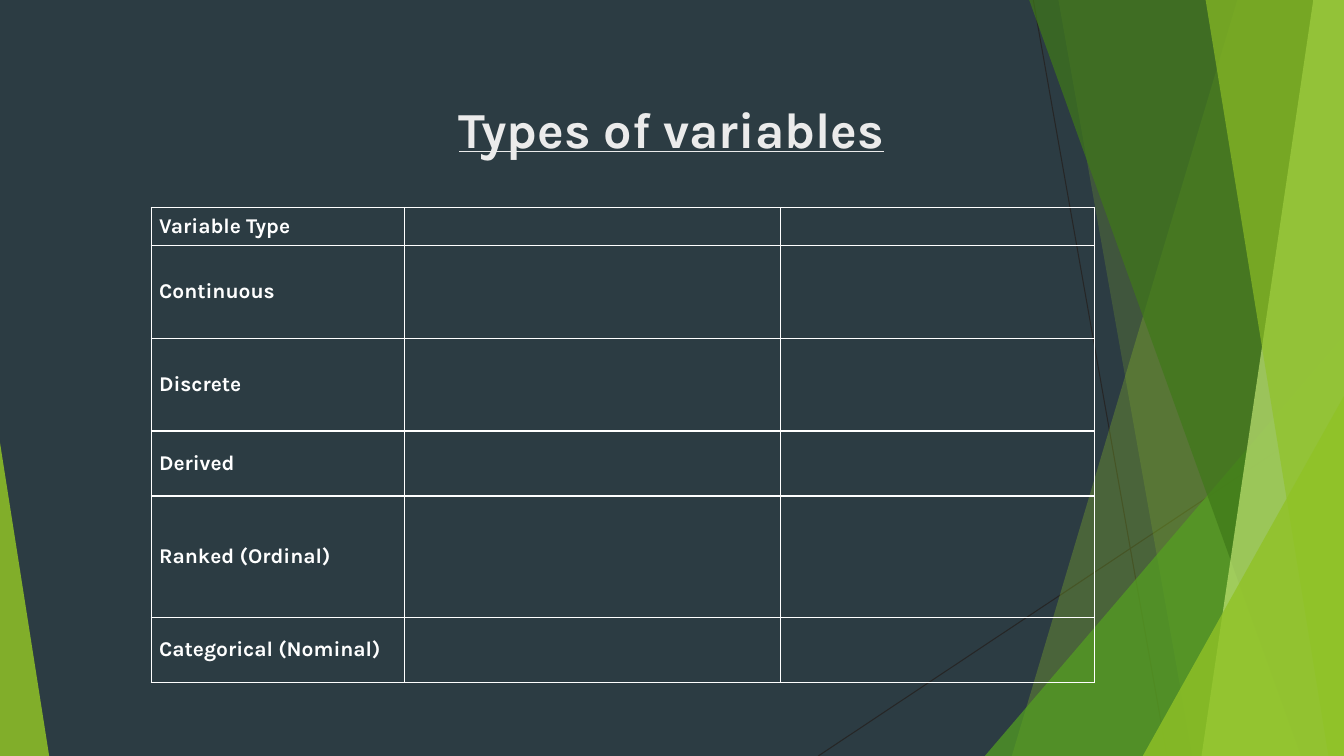
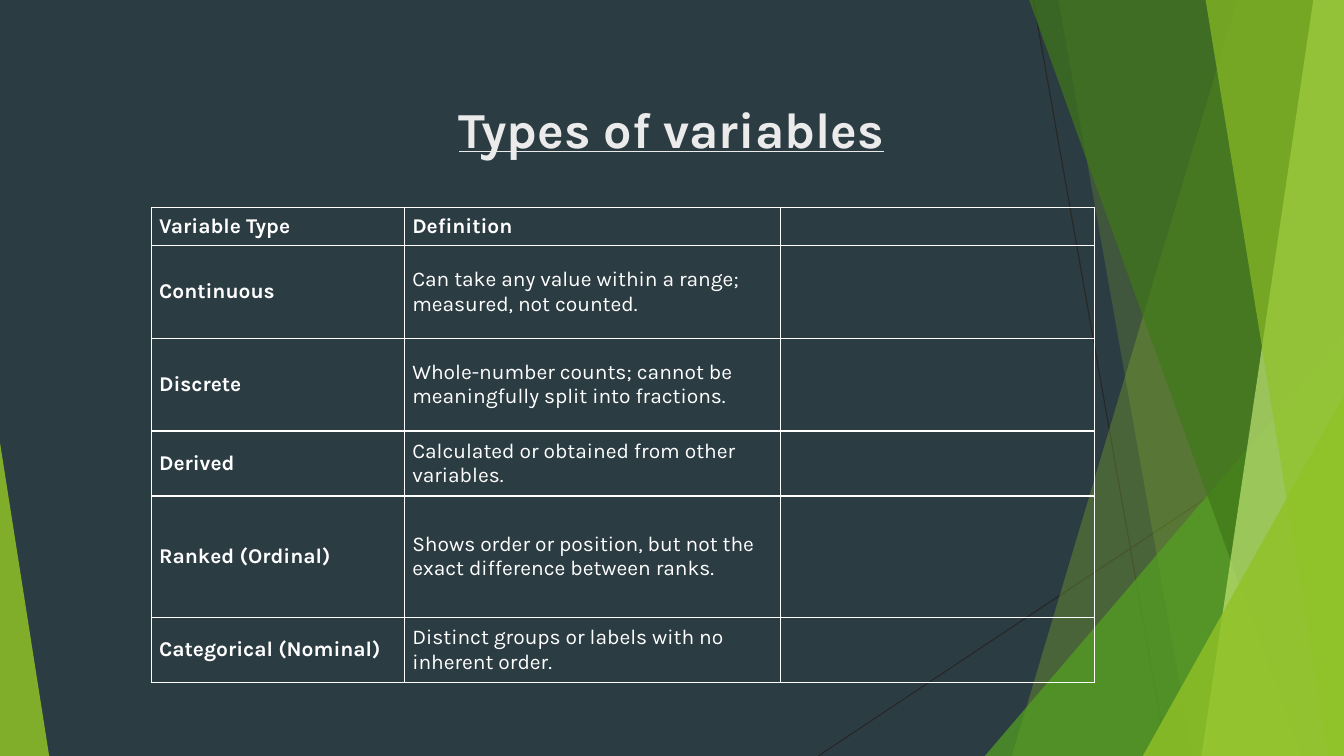
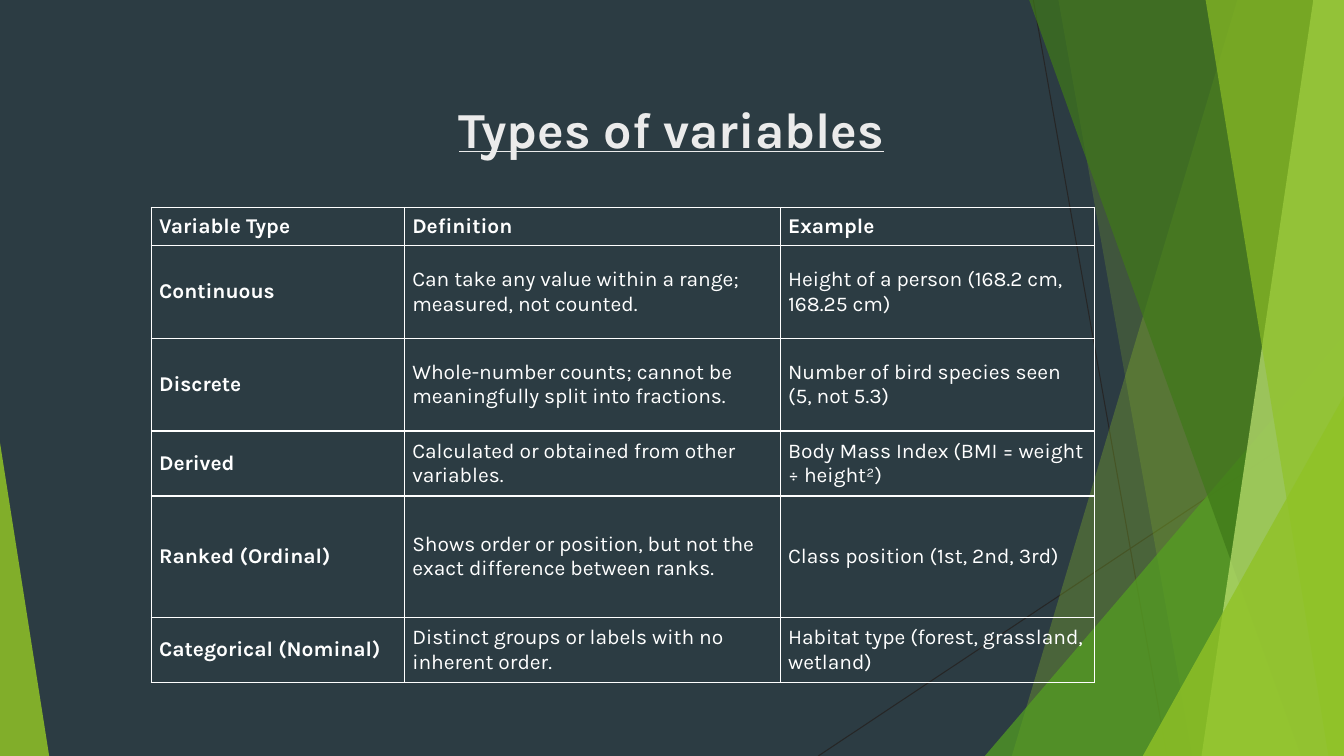
import dataclasses

import lxml.etree
import pptx
import pptx.dml.color
import pptx.enum.shapes
import pptx.enum.text
import pptx.oxml.ns
import pptx.util

Cm = pptx.util.Cm
Pt = pptx.util.Pt
qn = pptx.oxml.ns.qn
RGB = pptx.dml.color.RGBColor.from_string

WIDTH, HEIGHT = 33.87, 19.05
TITLE_ONLY_LAYOUT = 5


@dataclasses.dataclass(frozen=True)
class Theme:
    font: str = "Karla"
    title_size: int = 36
    table_size: int = 15
    background: str = "2C3C43"
    title: str = "EBEBEB"
    table: str = "FFFFFF"
    hairline: str = "262626"
    lime: str = "90C226"
    pale_lime: str = "C0E474"
    green: str = "54A021"
    dark_green: str = "3F7819"


THEME = Theme()

COLUMN_WIDTHS = (6.38, 9.47, 7.92)
ROW_HEIGHTS = (0.95, 2.34, 2.34, 1.64, 3.05, 1.65)
VARIABLES = (
    ("Variable Type", "Definition", "Example"),
    ("Continuous", "Can take any value within a range; measured, not counted.",
     "Height of a person (168.2 cm, 168.25 cm)"),
    ("Discrete", "Whole-number counts; cannot be meaningfully split into fractions.",
     "Number of bird species seen (5, not 5.3)"),
    ("Derived", "Calculated or obtained from other variables.",
     "Body Mass Index (BMI = weight ÷ height²)"),
    ("Ranked (Ordinal)", "Shows order or position, but not the exact difference between ranks.",
     "Class position (1st, 2nd, 3rd)"),
    ("Categorical (Nominal)", "Distinct groups or labels with no inherent order.",
     "Habitat type (forest, grassland, wetland)"),
)


def write_text(text_frame, text, *, size, color, bold=False, underline=False, align=None):
    text_frame.word_wrap = True
    paragraph = text_frame.paragraphs[0]
    paragraph.alignment = align
    if not text:
        # An empty cell still takes its row height from this size.
        lxml.etree.SubElement(paragraph._p, qn("a:endParaRPr"), sz=str(size * 100))
        return
    run = paragraph.add_run()
    run.text = text
    run.font.name = THEME.font
    run.font.size = Pt(size)
    run.font.bold = bold
    run.font.underline = underline
    run.font.color.rgb = RGB(color)


def add_cell_borders(cell, color, width):
    properties = cell._tc.get_or_add_tcPr()
    for position, side in enumerate(("a:lnL", "a:lnR", "a:lnT", "a:lnB")):
        line = lxml.etree.Element(qn(side), w=str(Pt(width)))
        fill = lxml.etree.SubElement(line, qn("a:solidFill"))
        lxml.etree.SubElement(fill, qn("a:srgbClr"), val=color)
        properties.insert(position, line)


class Deck:
    def __init__(self):
        self.presentation = pptx.Presentation()
        self.presentation.slide_width = Cm(WIDTH)
        self.presentation.slide_height = Cm(HEIGHT)
        self.layout = self.presentation.slide_layouts[TITLE_ONLY_LAYOUT]
        self.slide = None

    def add_slide(self):
        self.slide = self.presentation.slides.add_slide(self.layout)

    def line(self, x1, y1, x2, y2):
        connector = self.slide.shapes.add_connector(
            pptx.enum.shapes.MSO_CONNECTOR.STRAIGHT, Cm(x1), Cm(y1), Cm(x2), Cm(y2))
        connector.line.color.rgb = RGB(THEME.hairline)
        connector.line.width = Pt(0.75)
        lxml.etree.SubElement(connector.element.spPr, qn("a:effectLst"))

    def paint(self, shape, color, opacity):
        shape.shadow.inherit = False
        shape.fill.solid()
        shape.fill.fore_color.rgb = RGB(color)
        color_element = shape.element.spPr.find(".//" + qn("a:srgbClr"))
        lxml.etree.SubElement(color_element, qn("a:alpha"), val=str(opacity * 1000))
        shape.line.fill.background()

    def band(self, top_x, bottom_x, color, opacity):
        """Fill from a slanted left edge to the right side of the slide."""
        top = -0.02
        builder = self.slide.shapes.build_freeform(Cm(top_x), Cm(top))
        corners = ((WIDTH, top), (WIDTH, HEIGHT), (bottom_x, HEIGHT))
        builder.add_line_segments([(Cm(x), Cm(y)) for x, y in corners], close=True)
        self.paint(builder.convert_to_shape(), color, opacity)

    def corner(self, left, right, top, apex, color, opacity):
        """Add a triangle standing on the bottom edge, apex 0 left or 1 right."""
        shape = self.slide.shapes.add_shape(
            pptx.enum.shapes.MSO_SHAPE.ISOSCELES_TRIANGLE,
            Cm(left), Cm(top), Cm(right - left), Cm(HEIGHT - top))
        shape.adjustments[0] = apex
        self.paint(shape, color, opacity)

    def backdrop(self):
        """Draw the shared background and move it from the slide to its layout."""
        fill = self.layout.background.fill
        fill.solid()
        fill.fore_color.rgb = RGB(THEME.background)
        for placeholder in list(self.layout.placeholders)[1:]:
            self.layout.shapes.element.remove(placeholder.element)

        self.line(26.04, 0, 29.41, HEIGHT)
        self.line(WIDTH, 10.24, 20.62, HEIGHT)
        self.band(31.19, 25.5, THEME.lime, 30)
        self.band(26.67, 30.05, THEME.lime, 20)
        self.corner(24.82, WIDTH, 8.46, 1, THEME.green, 72)
        self.band(25.93, 32.79, THEME.dark_green, 70)
        self.band(33.1, 30.28, THEME.pale_lime, 70)
        self.band(30.38, 33.48, THEME.lime, 65)
        self.corner(28.8, WIDTH, 9.98, 1, THEME.lime, 80)
        self.corner(0, 1.24, 11.15, 0, THEME.lime, 85)

        drawn = [shape for shape in self.slide.shapes if not shape.is_placeholder]
        for position, shape in enumerate(drawn, start=2):
            self.layout.shapes.element.insert(position, shape.element)

    def title(self, text):
        shape = self.slide.shapes.title
        shape.left, shape.top = Cm(4.67), Cm(2.34)
        shape.width, shape.height = Cm(24.51), Cm(2.72)
        shape.text_frame.vertical_anchor = pptx.enum.text.MSO_ANCHOR.TOP
        write_text(shape.text_frame, text, size=THEME.title_size, color=THEME.title,
                   bold=True, underline=True, align=pptx.enum.text.PP_ALIGN.CENTER)

    def table(self, rows, shown_columns):
        """Add the table with text in only the first shown_columns columns."""
        table = self.slide.shapes.add_table(
            len(rows), len(COLUMN_WIDTHS), Cm(3.81), Cm(5.23),
            Cm(sum(COLUMN_WIDTHS)), Cm(sum(ROW_HEIGHTS))).table
        table.first_row = table.horz_banding = False
        for column, width in zip(table.columns, COLUMN_WIDTHS):
            column.width = Cm(width)
        for row, height in zip(table.rows, ROW_HEIGHTS):
            row.height = Cm(height)
        for row_index, texts in enumerate(rows):
            for column_index, text in enumerate(texts):
                cell = table.cell(row_index, column_index)
                cell.fill.background()
                cell.vertical_anchor = pptx.enum.text.MSO_ANCHOR.MIDDLE
                cell.margin_left = cell.margin_right = Cm(0.2)
                cell.margin_top = cell.margin_bottom = Cm(0.1)
                add_cell_borders(cell, THEME.table, 1)
                write_text(cell.text_frame, text if column_index < shown_columns else "",
                           size=THEME.table_size, color=THEME.table,
                           bold=row_index == 0 or column_index == 0)


def main():
    deck = Deck()
    for shown_columns in (1, 2, 3):
        deck.add_slide()
        if shown_columns == 1:
            deck.backdrop()
        deck.title("Types of variables")
        deck.table(VARIABLES, shown_columns)
    deck.presentation.save("out.pptx")


if __name__ == "__main__":
    main()
